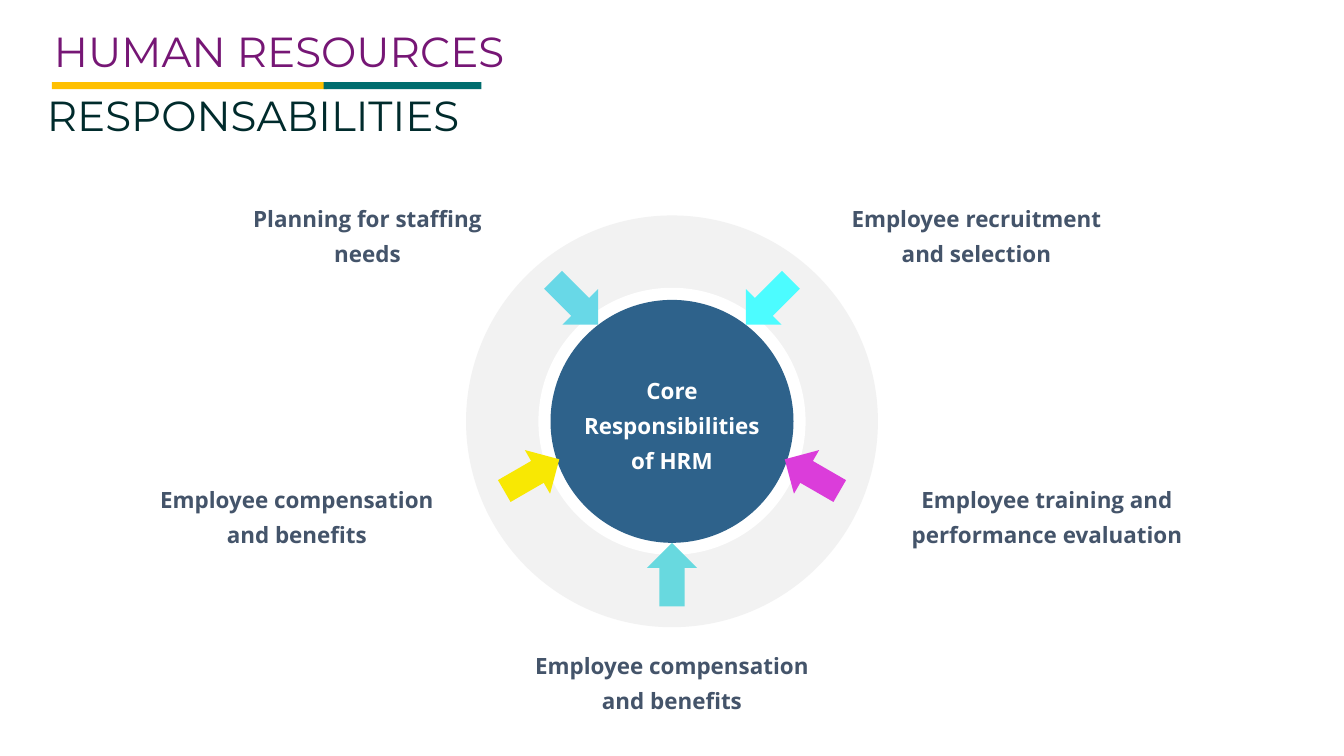
import math

import pptx
import pptx.dml.color
import pptx.enum.shapes
import pptx.enum.text
import pptx.util

RGBColor = pptx.dml.color.RGBColor
Inches = pptx.util.Inches
Shape = pptx.enum.shapes.MSO_SHAPE
Align = pptx.enum.text.PP_ALIGN
Anchor = pptx.enum.text.MSO_ANCHOR

WHITE = RGBColor(0xFF, 0xFF, 0xFF)
RING_GREY = RGBColor(0xF2, 0xF2, 0xF2)
CORE_BLUE = RGBColor(0x2E, 0x62, 0x8B)
SLATE = RGBColor(0x44, 0x54, 0x6A)
PURPLE = RGBColor(0x76, 0x16, 0x75)
DARK_TEAL = RGBColor(0x00, 0x2B, 0x2C)
TEAL = RGBColor(0x00, 0x6D, 0x6E)
AMBER = RGBColor(0xFF, 0xC0, 0x00)
AQUA = RGBColor(0x68, 0xD9, 0xDF)
SKY = RGBColor(0x68, 0xD8, 0xE7)
CYAN = RGBColor(0x4C, 0xFC, 0xFF)
YELLOW = RGBColor(0xF8, 0xE8, 0x03)
MAGENTA = RGBColor(0xDB, 0x3D, 0xDA)

WIDTH, HEIGHT = 26.66, 15
CENTER_X, CENTER_Y = WIDTH / 2, 8.36

RINGS = [(8.17, RING_GREY), (5.3, WHITE), (4.82, CORE_BLUE)]
ARROWS = [
    (180, 3.04, 0, AQUA),
    (39, 3.04, 225, CYAN),
    (321, 3.04, 135, SKY),
    (249, 2.98, 60, YELLOW),
    (111, 2.98, 300, MAGENTA),
]
LABELS = [
    (0, 5.12, "Employee compensation\nand benefits"),
    (7.44, 1.82, "Employee training and performance evaluation"),
    (-7.44, 1.82, "Employee compensation\nand benefits"),
    (-6.04, -3.76, "Planning for staffing needs"),
    (6.04, -3.76, "Employee recruitment and selection"),
]


def add_filled(page, kind, left, top, width, height, color):
    shape = page.shapes.add_shape(
        kind, Inches(left), Inches(top), Inches(width), Inches(height))
    shape.shadow.inherit = False
    shape.fill.solid()
    shape.fill.fore_color.rgb = color
    shape.line.fill.background()
    return shape


def add_centered(page, kind, x, y, width, height, color):
    return add_filled(page, kind, x - width / 2, y - height / 2,
                      width, height, color)


def add_arrow(page, bearing, reach, rotation, color):
    angle = math.radians(bearing)
    arrow = add_centered(
        page, Shape.UP_ARROW, CENTER_X + reach * math.sin(angle),
        CENTER_Y - reach * math.cos(angle), 1, 1.26, color)
    arrow.rotation = rotation


def format_text(frame, font, size, color, bold, align):
    for para in frame.paragraphs:
        para.alignment = align
        for span in para.runs:
            span.font.name = font
            span.font.size = pptx.util.Pt(size)
            span.font.bold = bold
            span.font.color.rgb = color


def add_label(page, x, y, width, height, text, color):
    box = page.shapes.add_textbox(
        Inches(x - width / 2), Inches(y - height / 2),
        Inches(width), Inches(height))
    frame = box.text_frame
    frame.word_wrap = True
    frame.vertical_anchor = Anchor.MIDDLE
    frame.text = text
    format_text(frame, "Open Sans", 32, color, True, Align.CENTER)
    for para in frame.paragraphs:
        para.line_spacing = pptx.util.Pt(50)


def set_heading(box, left, top, width, text, color):
    box.left, box.top = Inches(left), Inches(top)
    box.width, box.height = Inches(width), Inches(1.11)
    frame = box.text_frame
    frame.word_wrap = True
    frame.auto_size = pptx.enum.text.MSO_AUTO_SIZE.NONE
    frame.vertical_anchor = Anchor.TOP
    frame.text = text
    format_text(frame, "Montserrat", 60, color, False, Align.LEFT)


def add_headings(page):
    set_heading(page.shapes.title, 0.97, 0.46, 9.44, "HUMAN RESOURCES", PURPLE)
    subtitle = page.shapes.add_textbox(0, 0, 0, 0)
    set_heading(subtitle, 0.83, 1.72, 8.92, "RESPONSABILITIES", DARK_TEAL)
    add_filled(page, Shape.RECTANGLE, 1.03, 1.63, 5.46, 0.14, AMBER)
    add_filled(page, Shape.RECTANGLE, 6.42, 1.63, 3.13, 0.14, TEAL)


def main():
    deck = pptx.Presentation()
    deck.slide_width, deck.slide_height = Inches(WIDTH), Inches(HEIGHT)
    page = deck.slides.add_slide(deck.slide_layouts[5])
    for size, color in RINGS:
        add_centered(page, Shape.OVAL, CENTER_X, CENTER_Y, size, size, color)
    add_label(page, CENTER_X, CENTER_Y, 3.9, 2.15,
              "Core\nResponsibilities\nof HRM", WHITE)
    for arrow in ARROWS:
        add_arrow(page, *arrow)
    for across, down, text in LABELS:
        add_label(page, CENTER_X + across, CENTER_Y + down, 5.68, 1.44,
                  text, SLATE)
    add_headings(page)
    deck.save("out.pptx")


if __name__ == "__main__":
    main()
